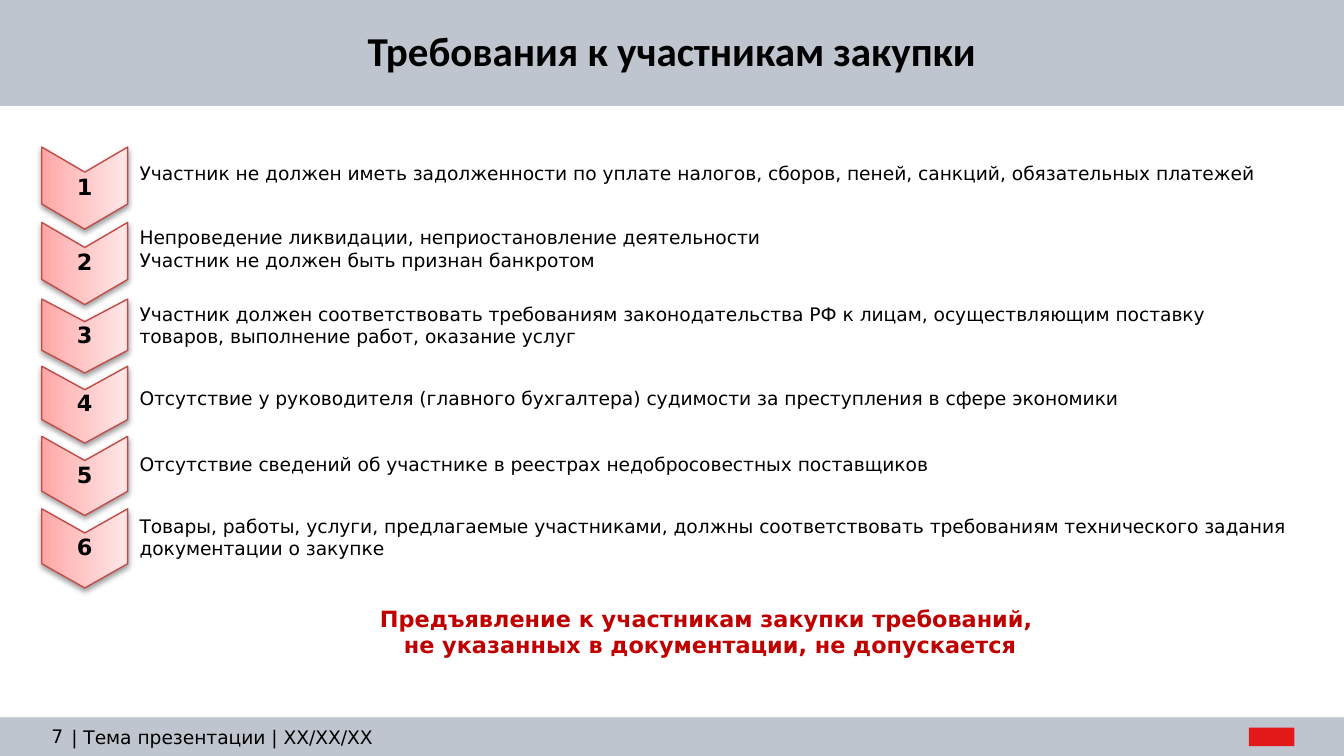
from collections import namedtuple
from dataclasses import dataclass

from lxml.etree import SubElement
from pptx import Presentation
from pptx.dml.color import RGBColor
from pptx.enum.shapes import MSO_SHAPE as Shape
from pptx.enum.text import MSO_ANCHOR as Anchor, PP_ALIGN as Align
from pptx.oxml.ns import qn
from pptx.util import Pt

Box = namedtuple("Box", "left top width height")
Row = namedtuple("Row", "top height text_height lines")


@dataclass(frozen=True)
class Theme:
    band: str = "BFC5CE"
    ink: str = "000000"
    accent: str = "C00000"
    emblem: str = "E21A1A"
    outline: str = "BF4C48"
    gradient: tuple = ((0, "FFA6A5"), (35, "FFC0BF"), (100, "FFE7E7"))
    title_font: str = "Calibri"
    body_font: str = "DejaVu Sans"
    title_size: float = 22
    strong_size: float = 12
    body_size: float = 10


THEME = Theme()

ROWS = [
    Row(78.8, 44, 28, ["Участник не должен иметь задолженности по уплате налогов, "
                       "сборов, пеней, санкций, обязательных платежей"]),
    Row(119.2, 44, 28, ["Непроведение ликвидации, неприостановление деятельности",
                        "Участник не должен быть признан банкротом"]),
    Row(160.2, 39.6, 28, ["Участник должен соответствовать требованиям законодательства РФ "
                          "к лицам, осуществляющим поставку товаров, выполнение работ, "
                          "оказание услуг"]),
    Row(196.2, 41.2, 30, ["Отсутствие у руководителя (главного бухгалтера) судимости "
                          "за преступления в сфере экономики"]),
    Row(233.8, 42.4, 30, ["Отсутствие сведений об участнике в реестрах "
                          "недобросовестных поставщиков"]),
    Row(272.6, 42.4, 30, ["Товары, работы, услуги, предлагаемые участниками, должны "
                          "соответствовать требованиям технического задания "
                          "документации о закупке"]),
]


def points(box):
    return [Pt(value) for value in box]


def add_text(page, box, lines, size=THEME.body_size, bold=False, color=THEME.ink,
             font=THEME.body_font, align=Align.LEFT, anchor=Anchor.TOP, inset=None):
    """Add a wrapped text box, one paragraph per line, and return its paragraphs."""
    frame = page.shapes.add_textbox(*points(box)).text_frame
    frame.word_wrap = True
    frame.vertical_anchor = anchor
    if inset is not None:
        frame.margin_left = frame.margin_right = Pt(inset)
        frame.margin_top = frame.margin_bottom = Pt(inset)
    for index, line in enumerate(lines):
        para = frame.add_paragraph() if index else frame.paragraphs[0]
        para.alignment = align
        span = para.add_run()
        span.text = line
        span.font.name = font
        span.font.size = Pt(size)
        span.font.bold = bold
        span.font.color.rgb = RGBColor.from_string(color)
    return frame.paragraphs


def add_plain(page, box, color):
    shape = page.shapes.add_shape(Shape.RECTANGLE, *points(box))
    shape.shadow.inherit = False
    shape.fill.solid()
    shape.fill.fore_color.rgb = RGBColor.from_string(color)
    shape.line.fill.background()
    return shape


def add_color(parent, color):
    return SubElement(parent, qn("a:srgbClr"), val=color)


def add_shadow(shape, color, opacity, blur, distance):
    """Cast a soft shadow straight down."""
    shape.shadow.inherit = False
    effects = shape.element.spPr.find(qn("a:effectLst"))
    shadow = SubElement(effects, qn("a:outerShdw"), blurRad=str(Pt(blur)),
                        dist=str(Pt(distance)), dir="5400000", rotWithShape="0")
    SubElement(add_color(shadow, color), qn("a:alpha"), val=str(opacity * 1000))


def set_gradient(shape):
    shape.fill.gradient()
    shape.fill.gradient_angle = 90  # counter-clockwise: runs from bottom to top
    stops = shape.element.spPr.find(qn("a:gradFill")).find(qn("a:gsLst"))
    for stop in list(stops):
        stops.remove(stop)
    for position, color in THEME.gradient:
        add_color(SubElement(stops, qn("a:gs"), pos=str(position * 1000)), color)


def add_header(page, box):
    add_plain(page, box, THEME.band)
    add_text(page, Box(0, 10.1, 720, 34), ["Требования к участникам закупки"],
             size=THEME.title_size, bold=True, font=THEME.title_font, align=Align.CENTER)


def add_footer(page, box):
    band = add_plain(page, box, THEME.band)
    add_shadow(band, "808080", 35, 3.1, 1.8)
    add_text(page, Box(box.left + 15.8, box.top + 3.9, 18, 12), ["7"],
             align=Align.RIGHT, anchor=Anchor.MIDDLE, inset=0)
    add_text(page, Box(box.left + 38.2, box.top + 4.5, 294, 12),
             ["| Тема презентации | XX/ХХ/ХХ"], inset=0)
    add_plain(page, Box(box.left + 669, box.top + 5.5, 24.5, 10), THEME.emblem)


def add_chevron(page, box, number):
    """Add a downward chevron filling the box, with its number upright on top."""
    middle_x, middle_y = box.left + box.width / 2, box.top + box.height / 2
    turned = Box(middle_x - box.height / 2, middle_y - box.width / 2, box.height, box.width)
    chevron = page.shapes.add_shape(Shape.CHEVRON, *points(turned))
    chevron.rotation = 90
    chevron.adjustments[0] = 0.306
    set_gradient(chevron)
    chevron.line.color.rgb = RGBColor.from_string(THEME.outline)
    chevron.line.width = Pt(0.75)
    add_shadow(chevron, "000000", 38, 3.1, 1.6)
    label = Box(box.left, middle_y - 11, box.width, 22)
    for para in add_text(page, label, [str(number)], size=THEME.strong_size, bold=True,
                         align=Align.CENTER, anchor=Anchor.MIDDLE, inset=0.7):
        para.line_spacing = 0.9


def add_requirement(page, box, number, row):
    chevron_width = 46
    text_left = box.left + chevron_width - 0.7
    text_box = Box(text_left, box.top, box.left + box.width - text_left, row.text_height)
    paras = add_text(page, text_box, row.lines, anchor=Anchor.MIDDLE)
    if number == 4:
        paras[0].line_spacing = Pt(16)
        paras[0].space_before = Pt(5)
        paras[0].space_after = Pt(6)
    add_chevron(page, Box(box.left, box.top, chevron_width, box.height), number)


def add_conclusion(page, box):
    lines = ["Предъявление к участникам закупки требований, ",
             "не указанных в документации, не допускается"]
    for para in add_text(page, box, lines, size=THEME.strong_size, bold=True,
                         color=THEME.accent, align=Align.CENTER):
        para._p.get_or_add_pPr().set("indent", str(Pt(42.5)))


def main():
    deck = Presentation()
    deck.slide_width, deck.slide_height = Pt(720), Pt(405)
    page = deck.slides.add_slide(deck.slide_layouts[6])
    add_header(page, Box(-1.5, -3, 721.5, 59.8))
    add_footer(page, Box(0, 384.3, 720, 20.7))
    for number, row in enumerate(ROWS, 1):
        add_requirement(page, Box(22.4, row.top, 674.6, row.height), number, row)
    add_conclusion(page, Box(95.8, 320.4, 527, 36.7))
    deck.save("out.pptx")


if __name__ == "__main__":
    main()
